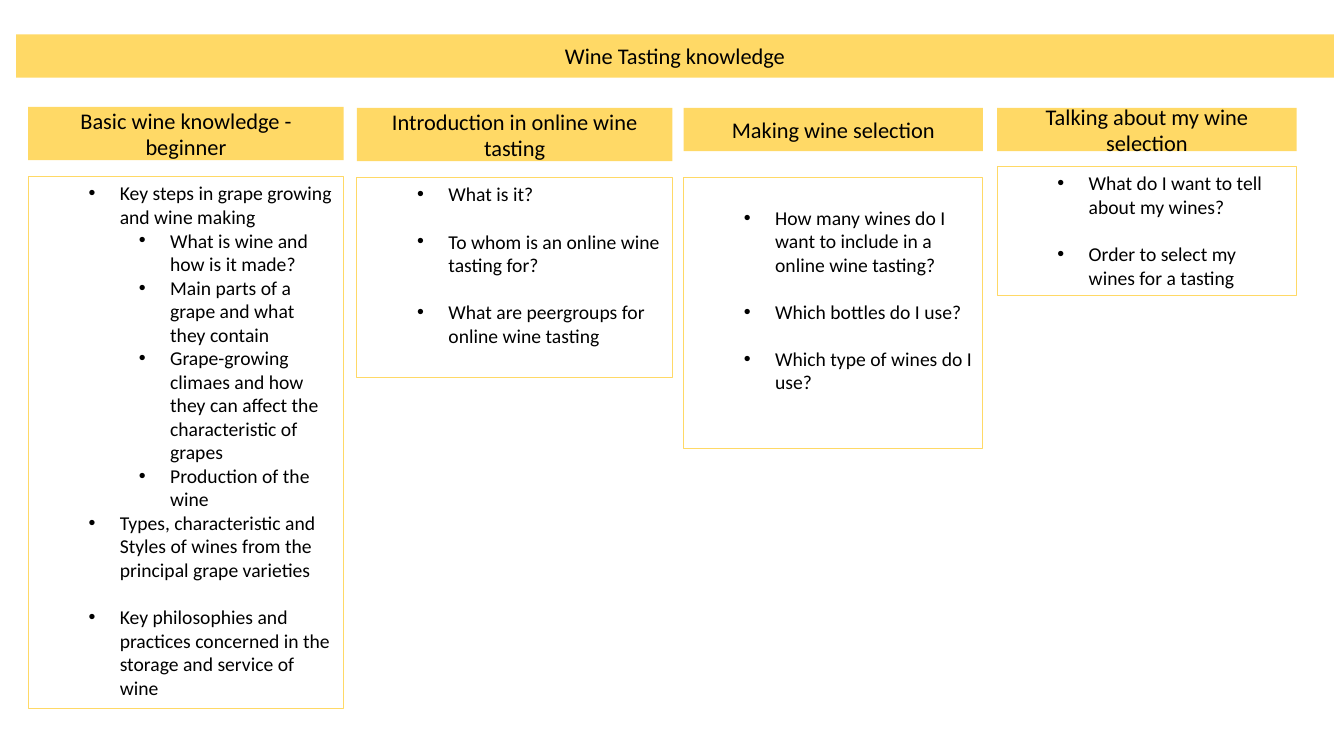
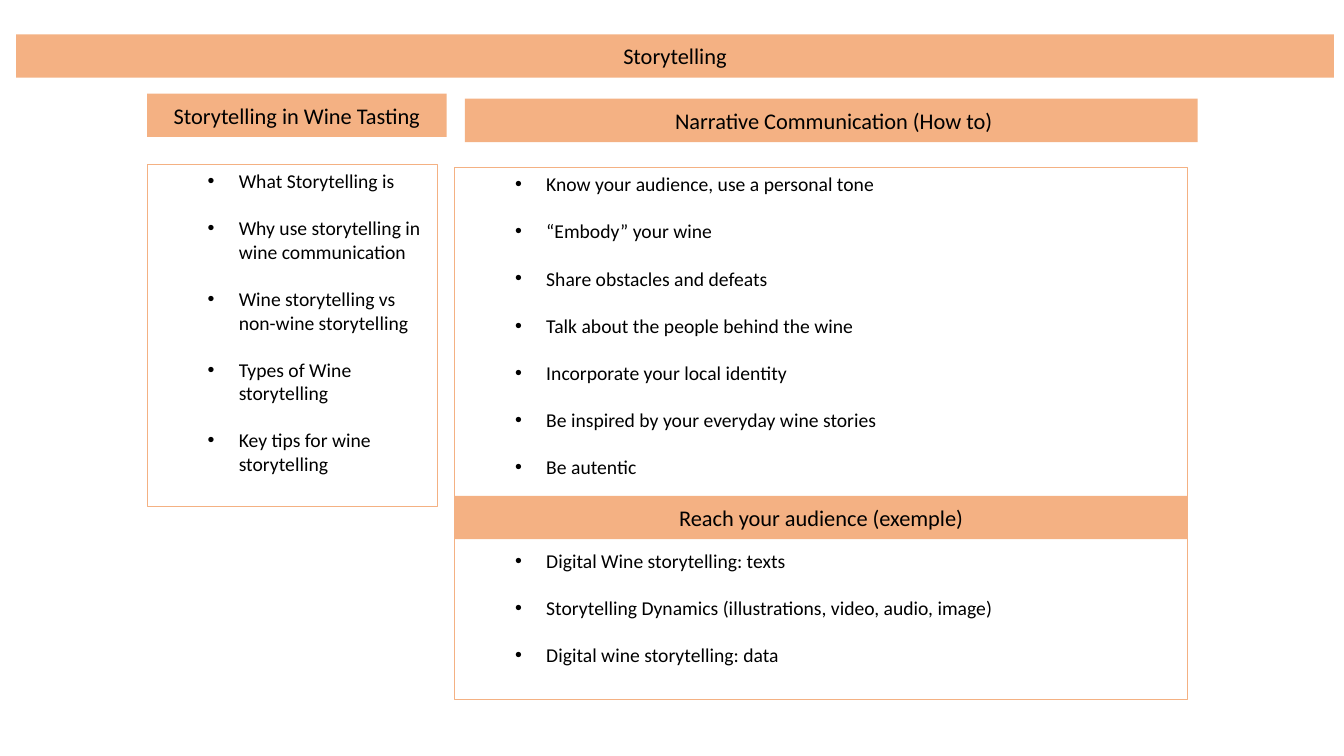
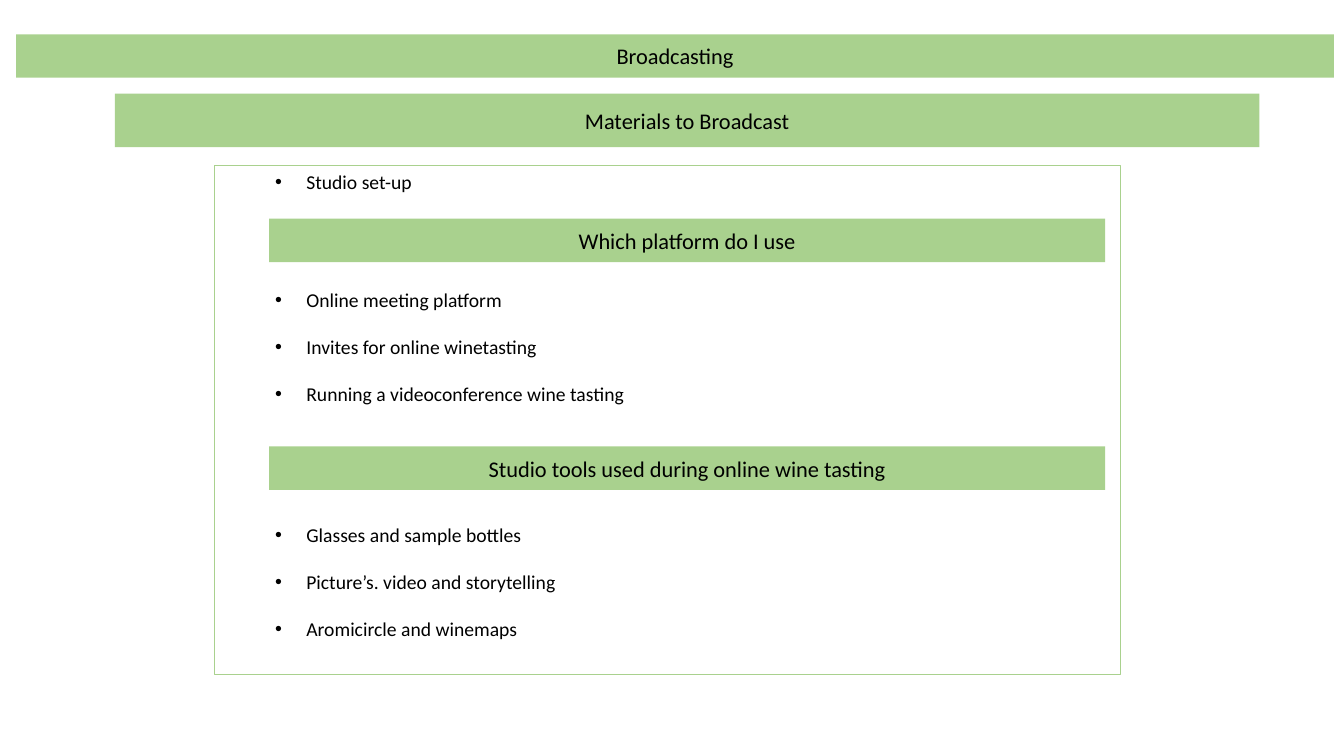
from lxml import etree
from pptx import Presentation
from pptx.dml.color import RGBColor
from pptx.enum.shapes import MSO_SHAPE
from pptx.enum.text import MSO_ANCHOR, MSO_AUTO_SIZE, PP_ALIGN
from pptx.oxml.ns import qn
from pptx.util import Pt

RECT = MSO_SHAPE.RECTANGLE
TOP, MIDDLE = MSO_ANCHOR.TOP, MSO_ANCHOR.MIDDLE
LEFT, CENTER = PP_ALIGN.LEFT, PP_ALIGN.CENTER
NO_FIT = MSO_AUTO_SIZE.NONE

YELLOW = RGBColor(0xFF, 0xD9, 0x66)
ORANGE = RGBColor(0xF4, 0xB1, 0x83)
GREEN = RGBColor(0xA9, 0xD1, 0x8E)
BLACK = RGBColor(0, 0, 0)

PX = 9144  # 100 px to the inch
TITLE_BOX = (16, 34, 1307, 43)
INSETS = (10, 5, 10, 5)
SIDES = ("left", "top", "right", "bottom")
HEAD_FONT = {"name": "Calibri", "size": Pt(16), "bold": False}
ITEM_FONT = {"name": "Calibri", "size": Pt(14), "bold": False}
LINE_PT = 16.8  # height of one list line
HANG = 31       # bullet to text
INDENTS = {1: 81, 2: 131}


def px(n):
    return n * PX


def set_font(r, values):
    for name, value in values.items():
        setattr(r.font, name, value)
    r.font.color.rgb = BLACK


def set_frame(tf, anchor, insets=INSETS):
    values = {"word_wrap": True, "auto_size": NO_FIT, "vertical_anchor": anchor}
    for name, value in values.items():
        setattr(tf, name, value)
    for side, inset in zip(SIDES, insets):
        setattr(tf, "margin_" + side, px(inset))


def add_rect(s, box):
    sp = s.shapes.add_shape(RECT, *map(px, box))
    sp.shadow.inherit = False
    return sp


def format_band(sp, text, color):
    """Solid bar with one centred line of text."""
    sp.fill.solid()
    sp.fill.fore_color.rgb = color
    sp.line.fill.background()
    set_frame(sp.text_frame, MIDDLE)
    p = sp.text_frame.paragraphs[0]
    p.alignment = CENTER
    r = p.add_run()
    r.text = text
    set_font(r, HEAD_FONT)


def add_band(s, box, text, color):
    format_band(add_rect(s, box), text, color)


def add_bullet(p, level):
    pPr = p._p.get_or_add_pPr()
    pPr.set("marL", str(px(INDENTS[level])))
    pPr.set("indent", str(px(-HANG)))
    clr = etree.SubElement(pPr, qn("a:buClr"))
    etree.SubElement(clr, qn("a:srgbClr")).set("val", str(BLACK))
    etree.SubElement(pPr, qn("a:buFont")).set("typeface", "Arial")
    etree.SubElement(pPr, qn("a:buChar")).set("char", "•")


def add_list(s, box, items, color, top=5):
    """Outlined box of bullets; each item is (lines of gap above, level, text)."""
    sp = add_rect(s, box)
    sp.fill.background()
    sp.line.color.rgb = color
    sp.line.width = Pt(0.75)
    tf = sp.text_frame
    set_frame(tf, TOP, (10, top, 10, 5))
    for i, (gap, level, text) in enumerate(items):
        p = tf.add_paragraph() if i else tf.paragraphs[0]
        p.level = level
        p.alignment = LEFT
        p.space_before = Pt(gap * LINE_PT)
        add_bullet(p, level)
        r = p.add_run()
        r.text = text
        set_font(r, ITEM_FONT)


def spaced(*texts, first=0):
    """First-level items with one line of gap between them."""
    return [(1 if i else first, 1, text) for i, text in enumerate(texts)]


def add_slide(prs, title, color):
    s = prs.slides.add_slide(prs.slide_layouts[5])
    sp = s.shapes.title
    for name, n in zip(("left", "top", "width", "height"), TITLE_BOX):
        setattr(sp, name, px(n))
    format_band(sp, title, color)
    return s


def knowledge_slide(prs):
    s = add_slide(prs, "Wine Tasting knowledge", YELLOW)
    basics = [
        (0, 1, "Key steps in grape growing and wine making"),
        (0, 2, "What is wine and how is it made?"),
        (0, 2, "Main parts of a grape and what they contain"),
        (0, 2, "Grape-growing climaes and how they can affect the "
               "characteristic of grapes"),
        (0, 2, "Production of the wine"),
        (0, 1, "Types, characteristic and Styles of wines from the "
               "principal grape varieties"),
        (1, 1, "Key philosophies and practices concerned in the storage "
               "and service of wine"),
    ]
    introduction = spaced("What is it?",
                          "To whom is an online wine tasting for?",
                          "What are peergroups for online wine tasting")
    selection = spaced("How many wines do I want to include in a online wine tasting?",
                       "Which bottles do I use?",
                       "Which type of wines do I use?")
    talking = spaced("What do I want to tell about my wines?",
                     "Order to select my wines for a tasting")
    # left, width, header top and height, list top and height, list inset
    columns = [
        ("Basic wine knowledge - beginner", basics, 28, 313, 106, 53, 175, 528, 5),
        ("Introduction in online wine tasting", introduction, 354, 313, 107, 53, 176, 199, 5),
        ("Making wine selection", selection, 678, 297, 107, 43, 176, 269, 28),
        ("Talking about my wine selection", talking, 989, 297, 107, 43, 165, 128, 5),
    ]
    for head, items, x, w, head_y, head_h, y, h, inset in columns:
        add_band(s, (x, head_y, w, head_h), head, YELLOW)
        add_list(s, (x, y, w, h), items, YELLOW, inset)


def storytelling_slide(prs):
    s = add_slide(prs, "Storytelling", ORANGE)
    # Left column
    add_band(s, (146, 93, 297, 43), "Storytelling in Wine Tasting", ORANGE)
    add_list(s, (146, 163, 288, 340), spaced(
        "What Storytelling is",
        "Why use storytelling in wine communication",
        "Wine storytelling vs non-wine storytelling",
        "Types of Wine storytelling",
        "Key tips for wine storytelling"), ORANGE)
    # Right column, split by a band
    x, w = 451, 727
    add_band(s, (461, 98, w, 43), " Narrative Communication (How to)", ORANGE)
    narrative = spaced("Know your audience, use a personal tone",
                       "“Embody” your wine",
                       "Share obstacles and defeats",
                       "Talk about the people behind the wine",
                       "Incorporate your local identity",
                       "Be inspired by your everyday wine stories",
                       "Be autentic")
    audience = spaced("Digital Wine storytelling: texts",
                      "Storytelling Dynamics (illustrations, video, audio, image)",
                      "Digital wine storytelling: data", first=3)
    add_list(s, (x, 166, w, 528), narrative + audience, ORANGE)
    add_band(s, (x, 492, w, 43), "Reach your audience (exemple)", ORANGE)


def broadcasting_slide(prs):
    s = add_slide(prs, "Broadcasting", GREEN)
    add_band(s, (114, 93, 1135, 53), "Materials to Broadcast", GREEN)
    platform = spaced("Online meeting platform",
                      "Invites for online winetasting",
                      "Running a videoconference wine tasting", first=4)
    tools = spaced("Glasses and sample bottles",
                   "Picture’s. video and storytelling",
                   "Aromicircle and winemaps", first=5)
    add_list(s, (213, 164, 898, 505), spaced("Studio set-up") + platform + tools, GREEN)
    # Bands inside the list
    for y, text in ((217, "Which platform do I use"),
                    (443, "Studio tools used during online wine tasting")):
        add_band(s, (267, y, 829, 43), text, GREEN)


def main():
    prs = Presentation()
    prs.slide_width, prs.slide_height = px(1333), px(750)
    knowledge_slide(prs)
    storytelling_slide(prs)
    broadcasting_slide(prs)
    prs.save("out.pptx")


if __name__ == "__main__":
    main()
